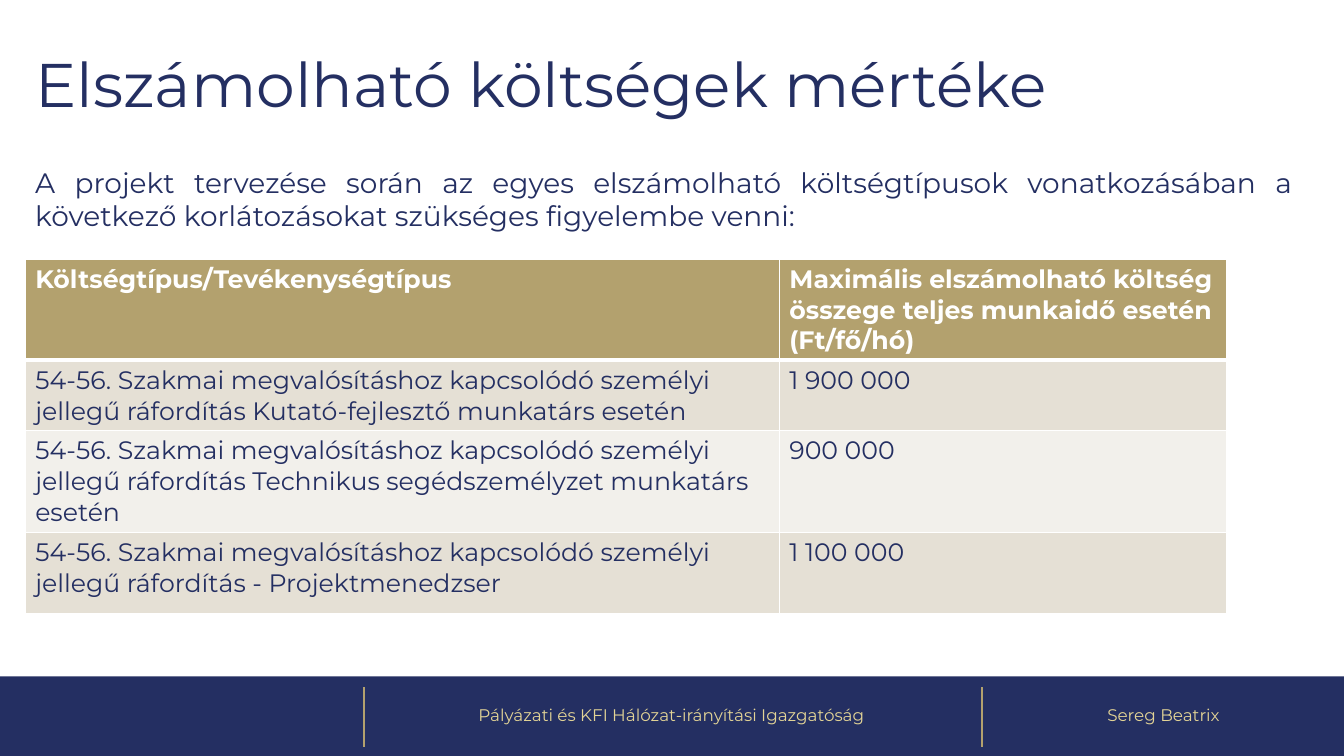
from pptx import Presentation
from pptx.dml.color import RGBColor
from pptx.enum.shapes import MSO_CONNECTOR, MSO_SHAPE
from pptx.enum.text import MSO_ANCHOR, MSO_AUTO_SIZE, PP_ALIGN
from pptx.oxml.ns import qn
from pptx.util import Inches, Pt
from lxml.etree import SubElement

# Content
TITLE = "Elszámolható költségek mértéke"
INTRO = ("A projekt tervezése során az egyes elszámolható költségtípusok "
         "vonatkozásában a következő korlátozásokat szükséges figyelembe venni:")
COST_PREFIX = "54-56. Szakmai megvalósításhoz kapcsolódó személyi jellegű ráfordítás "
COST_ROWS = [
    ("Költségtípus/Tevékenységtípus",
     "Maximális elszámolható költség összege teljes munkaidő esetén (Ft/fő/hó)"),
    (COST_PREFIX + "Kutató-fejlesztő munkatárs esetén", "1 900 000"),
    (COST_PREFIX + "Technikus segédszemélyzet munkatárs esetén", "900 000"),
    (COST_PREFIX + "- Projektmenedzser", "1 100 000"),
]
DEPARTMENT = "Pályázati és KFI Hálózat-irányítási Igazgatóság"
PRESENTER = "Sereg Beatrix"

# Style and layout
FONT = "Montserrat"
NAVY = RGBColor(0x24, 0x2F, 0x62)
GOLD = RGBColor(0xB3, 0xA1, 0x6E)
PALE_GOLD = RGBColor(0xE3, 0xD4, 0x96)
WHITE = RGBColor(0xFF, 0xFF, 0xFF)
BANDS = [RGBColor(0xF2, 0xF0, 0xEB), RGBColor(0xE5, 0xE0, 0xD5)]
WIDTH, HEIGHT = 13.33, 7.5
LEFT = 0.25
FOOTER_TOP, FOOTER_HEIGHT = 6.71, 0.79
DIVIDERS = [3.61, 9.74]
COLUMN_WIDTHS = [7.48, 4.44]
ROW_HEIGHTS = [0.99, 0.7, 1.01, 0.81]


def write_text(frame, text, size, color, bold=False, align=PP_ALIGN.LEFT,
               anchor=MSO_ANCHOR.TOP, spacing=1.0):
    frame.text = text
    frame.word_wrap = True
    frame.vertical_anchor = anchor
    paragraph = frame.paragraphs[0]
    paragraph.alignment = align
    paragraph.line_spacing = spacing
    paragraph.space_before = Pt(0)
    font = paragraph.font
    font.name, font.size, font.bold = FONT, Pt(size), bold
    font.color.rgb = color


def place(shape, left, top, width, height):
    shape.left, shape.top = Inches(left), Inches(top)
    shape.width, shape.height = Inches(width), Inches(height)


def set_borders(cell, bottom_width):
    properties = cell._tc.get_or_add_tcPr()
    for position, side in enumerate(("lnL", "lnR", "lnT", "lnB")):
        width = bottom_width if side == "lnB" else 1
        line = properties.makeelement(qn(f"a:{side}"), {"w": str(Pt(width))})
        fill = SubElement(line, qn("a:solidFill"))
        SubElement(fill, qn("a:srgbClr"), val=str(WHITE))
        properties.insert(position, line)


presentation = Presentation()
presentation.slide_width, presentation.slide_height = Inches(WIDTH), Inches(HEIGHT)
slide = presentation.slides.add_slide(presentation.slide_layouts.get_by_name("Comparison"))
shapes = slide.shapes
title, department, first_spare, presenter, second_spare = slide.placeholders
for spare in (first_spare, second_spare):
    spare.element.getparent().remove(spare.element)

# Footer bar and dividers, behind the placeholders
bar = shapes.add_shape(MSO_SHAPE.RECTANGLE, 0, Inches(FOOTER_TOP),
                       Inches(WIDTH), Inches(FOOTER_HEIGHT))
bar.shadow.inherit = False
bar.fill.solid()
bar.fill.fore_color.rgb = NAVY
bar.line.fill.background()
footer_parts = [bar]
for x in DIVIDERS:
    divider = shapes.add_connector(MSO_CONNECTOR.STRAIGHT, Inches(x), Inches(6.82),
                                   Inches(x), Inches(7.41))
    divider.line.color.rgb = GOLD
    divider.line.width = Pt(1.5)
    SubElement(divider.element.spPr, qn("a:effectLst"))
    footer_parts.append(divider)
for part in footer_parts:
    title.element.addprevious(part.element)

# Title and footer texts
place(title, LEFT, 0.14, 12.49, 1.45)
write_text(title.text_frame, TITLE, 44, NAVY, anchor=MSO_ANCHOR.MIDDLE, spacing=0.9)
for placeholder, text, left, width in ((department, DEPARTMENT, 3.59, 6.14),
                                       (presenter, PRESENTER, 9.74, 3.6)):
    place(placeholder, left, FOOTER_TOP, width, FOOTER_HEIGHT)
    write_text(placeholder.text_frame, text, 12, PALE_GOLD, align=PP_ALIGN.CENTER,
               anchor=MSO_ANCHOR.MIDDLE, spacing=0.9)
for placeholder in (title, department, presenter):
    placeholder.text_frame.auto_size = MSO_AUTO_SIZE.NONE

# Introduction
intro = shapes.add_textbox(Inches(LEFT), Inches(1.59), Inches(12.67), Inches(0.77))
write_text(intro.text_frame, INTRO, 20, NAVY, align=PP_ALIGN.JUSTIFY)

# Cost table
table = shapes.add_table(len(COST_ROWS), len(COLUMN_WIDTHS), Inches(LEFT), Inches(2.57),
                         Inches(sum(COLUMN_WIDTHS)), Inches(sum(ROW_HEIGHTS))).table
for column, width in zip(table.columns, COLUMN_WIDTHS):
    column.width = Inches(width)
for row_index, (row, height) in enumerate(zip(table.rows, ROW_HEIGHTS)):
    row.height = Inches(height)
    header = row_index == 0
    for cell, text in zip(row.cells, COST_ROWS[row_index]):
        write_text(cell.text_frame, text, 18, WHITE if header else NAVY, bold=header)
        cell.fill.solid()
        cell.fill.fore_color.rgb = GOLD if header else BANDS[row_index % 2]
        set_borders(cell, bottom_width=3 if header else 1)
        if row_index == 1:
            cell._tc.tcPr.find(qn("a:lnT")).set("w", str(Pt(3)))

presentation.save("out.pptx")
